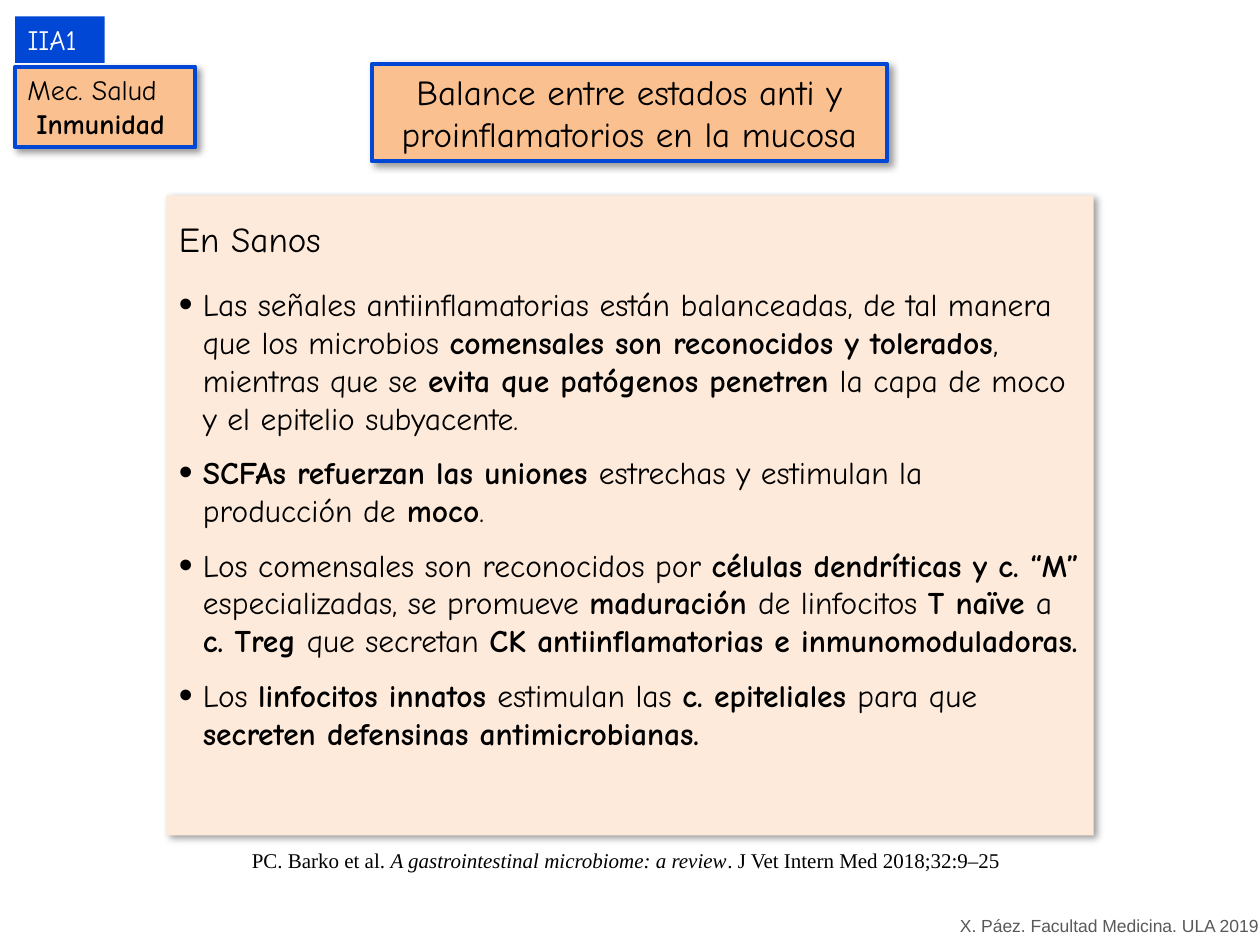
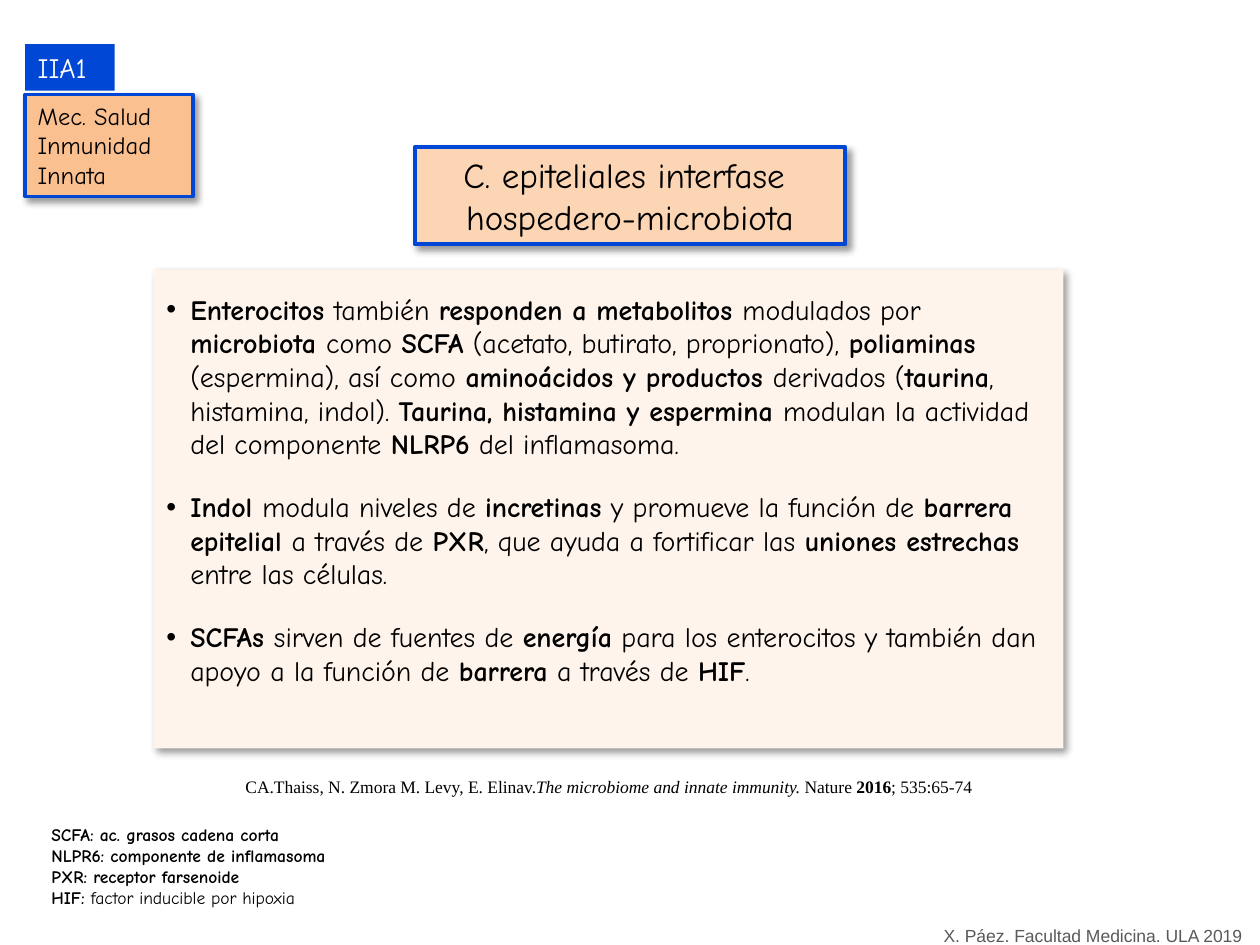
from lxml import etree
from pptx import Presentation
from pptx.dml.color import RGBColor
from pptx.enum.shapes import MSO_SHAPE as Shape
from pptx.enum.text import MSO_ANCHOR as Anchor, MSO_AUTO_SIZE as AutoSize, PP_ALIGN as Align
from pptx.oxml.ns import qn
from pptx.util import Inches, Pt

BLUE = RGBColor(0x00, 0x47, 0xD6)
ORANGE = RGBColor(0xFA, 0xC0, 0x90)
PEACH = RGBColor(0xFC, 0xD5, 0xB5)
CREAM = RGBColor(0xFD, 0xEA, 0xDA)
IVORY = RGBColor(0xFE, 0xF4, 0xEC)
BLACK = RGBColor(0x00, 0x00, 0x00)
WHITE = RGBColor(0xFF, 0xFF, 0xFF)
GRAY = RGBColor(0x59, 0x59, 0x59)

HAND, SERIF, SANS = "Comic Neue", "Times New Roman", "Arial"
BULLET_INDENT = Inches(0.19)
CREDIT = "X. Páez. Facultad Medicina. ULA 2019"


# --- Text ---
def add_runs(paragraph, marked):
    """Write text in which *...* is bold and _..._ is italic."""
    for i, stretch in enumerate(marked.split("*")):
        for j, words in enumerate(stretch.split("_")):
            if words:
                run = paragraph.add_run()
                run.text = words
                if i % 2:
                    run.font.bold = True
                if j % 2:
                    run.font.italic = True


def set_indent(paragraph, left, first=0):
    properties = paragraph._p.get_or_add_pPr()
    properties.set("marL", str(left))
    properties.set("indent", str(first))
    return properties


def set_bullet(paragraph, percent):
    properties = set_indent(paragraph, BULLET_INDENT, -BULLET_INDENT)
    etree.SubElement(properties, qn("a:buSzPct")).set("val", str(percent * 1000))
    etree.SubElement(properties, qn("a:buFont")).set("typeface", SANS)
    etree.SubElement(properties, qn("a:buChar")).set("char", "•")


def set_style(paragraph, size, font=HAND, color=BLACK, align=Align.LEFT):
    paragraph.alignment = align
    paragraph.font.size = Pt(size)
    paragraph.font.name = font
    paragraph.font.color.rgb = color


def next_paragraph(frame):
    first = frame.paragraphs[0]
    return frame.add_paragraph() if first.runs else first


def write(frame, lines, size, wrap=True, **style):
    frame.word_wrap = wrap
    frame.auto_size = AutoSize.NONE
    frame.vertical_anchor = Anchor.TOP
    for line in lines:
        paragraph = next_paragraph(frame)
        add_runs(paragraph, line)
        paragraph.space_before = Pt(0)
        set_style(paragraph, size, **style)


# --- Boxes ---
def place(shape, box):
    shape.left, shape.top, shape.width, shape.height = map(Inches, box)


def paint(shape, fill, border=None, shadow=True):
    shape.fill.solid()
    shape.fill.fore_color.rgb = fill
    if border:
        shape.line.color.rgb = border
        shape.line.width = Pt(2.25)
    else:
        shape.line.fill.background()
    shape.shadow.inherit = False
    if shadow:
        effects = shape._element.spPr.find(qn("a:effectLst"))
        outer = etree.SubElement(effects, qn("a:outerShdw"), blurRad=str(Pt(4)),
                                 dist=str(Pt(3)), dir=str(45 * 60000))
        tint = etree.SubElement(outer, qn("a:srgbClr"), val=str(BLACK))
        etree.SubElement(tint, qn("a:alpha"), val="40000")


def add_box(slide, box, lines, size, fill, border=None, shadow=True, color=BLACK):
    panel = slide.shapes.add_shape(Shape.RECTANGLE, *map(Inches, box))
    paint(panel, fill, border, shadow)
    write(panel.text_frame, lines, size, color=color)
    return panel


def add_note(slide, box, lines, size, **style):
    note = slide.shapes.add_textbox(*map(Inches, box))
    write(note.text_frame, lines, size, **style)


# --- Slide parts ---
def add_topic(slide, left, top, box_size, lines, size):
    """Section code above the box that names the topic."""
    add_box(slide, (left, top, 0.71, 0.37), ["IIA1"], 16, BLUE, shadow=False, color=WHITE)
    return add_box(slide, (left, top + 0.4, *box_size), lines, size, ORANGE, BLUE)


def set_title(slide, box, lines, fill):
    title = slide.shapes.title
    place(title, box)
    paint(title, fill, BLUE)
    write(title.text_frame, lines, 20, align=Align.CENTER)


def set_points(slide, box, fill, points, size, gap, bullet_size, heading=None):
    body = slide.placeholders[1]
    place(body, box)
    paint(body, fill)
    frame = body.text_frame
    frame.margin_top = Inches(0.18)
    write(frame, [heading] if heading else [], 20)
    if heading:
        heading_properties = set_indent(frame.paragraphs[0], 0)
        heading_properties.insert_element_before(
            etree.Element(qn("a:buNone")), "a:tabLst", "a:defRPr", "a:extLst")
    for number, point in enumerate(points):
        paragraph = next_paragraph(frame)
        add_runs(paragraph, point)
        paragraph.space_before = Pt(gap if number else 14.4 if heading else 0)
        set_bullet(paragraph, bullet_size)
        set_style(paragraph, size)


def add_credit(slide, left, top):
    add_note(slide, (left, top, 2.59, 0.27), [CREDIT], 10, wrap=False, font=SANS, color=GRAY)


# --- Slides ---
def build_balance(slide):
    add_credit(slide, 7.52, 7.21)
    topic = add_topic(slide, 0.12, 0.13, (1.43, 0.64), ["Mec. Salud", "*Inmunidad*"], 16)
    set_indent(topic.text_frame.paragraphs[1], Inches(0.07))
    set_title(slide, (2.95, 0.51, 4.09, 0.77),
              ["Balance entre estados anti y proinflamatorios en la mucosa"], ORANGE)
    set_points(slide, (1.32, 1.55, 7.36, 5.08), CREAM, [
        "Las señales antiinflamatorias están balanceadas, de tal manera que los microbios "
        "*comensales son reconocidos y tolerados*, mientras que se "
        "*evita que patógenos penetren *la capa de moco y el epitelio subyacente.",
        "*SCFAs refuerzan las uniones *estrechas y estimulan la producción de* moco*.",
        "Los comensales son reconocidos por *células dendríticas y c. “M” *especializadas, "
        "se promueve *maduración *de linfocitos *T naïve *a *c. Treg *que secretan "
        "*CK antiinflamatorias e inmunomoduladoras.*",
        "Los *linfocitos innatos *estimulan las *c. epiteliales *para que "
        "*secreten defensinas antimicrobianas.*",
    ], size=18, gap=9.6, bullet_size=125, heading="En Sanos")
    add_note(slide, (1.9, 6.68, 6.21, 0.3),
             ["PC. Barko et al. _A gastrointestinal microbiome: a review_. "
              "J Vet Intern Med 2018;32:9–25"], 12, font=SERIF)


def build_epithelium(slide):
    add_credit(slide, 7.39, 7.29)
    add_topic(slide, 0.2, 0.35, (1.33, 0.81), ["Mec. Salud", "Inmunidad", "Innata"], 14)
    set_title(slide, (3.29, 1.17, 3.42, 0.77),
              ["C. epiteliales interfase ", "hospedero-microbiota"], PEACH)
    set_points(slide, (1.22, 2.14, 7.22, 3.8), IVORY, [
        "*Enterocitos *también *responden a metabolitos *modulados por* microbiota *como "
        "*SCFA* (acetato, butirato, proprionato), *poliaminas* (espermina), así como "
        "*aminoácidos y productos *derivados (*taurina*, histamina, indol). "
        "*Taurina, histamina y espermina *modulan la actividad del componente "
        "*NLRP6* del inflamasoma.",
        "*Indol *modula niveles de *incretinas* y promueve la función de "
        "*barrera epitelial *a través de *PXR*, que ayuda a fortificar las "
        "*uniones estrechas *entre las células.",
        "*SCFAs *sirven de fuentes de *energía* para los enterocitos y también dan apoyo "
        "a la función de *barrera* a través de *HIF*.",
    ], size=16, gap=16.8, bullet_size=100)
    add_note(slide, (0.31, 6.49, 2.82, 0.77),
             ["*SCFA: ac. grasos cadena corta*", "*NLPR6: componente de inflamasoma*",
              "*PXR: receptor farsenoide*", "*HIF: *factor inducible por hipoxia"], 10)
    add_note(slide, (1.85, 6.11, 6.3, 0.27),
             ["CA.Thaiss, N. Zmora M. Levy, E. Elinav._The microbiome and innate immunity. _"
              "Nature *2016*; 535:65-74"], 10, font=SERIF)


def main():
    deck = Presentation()
    deck.slide_width, deck.slide_height = Inches(10), Inches(7.5)
    title_and_list = deck.slide_layouts[1]
    for build in (build_balance, build_epithelium):
        build(deck.slides.add_slide(title_and_list))
    deck.save("out.pptx")


if __name__ == "__main__":
    main()
